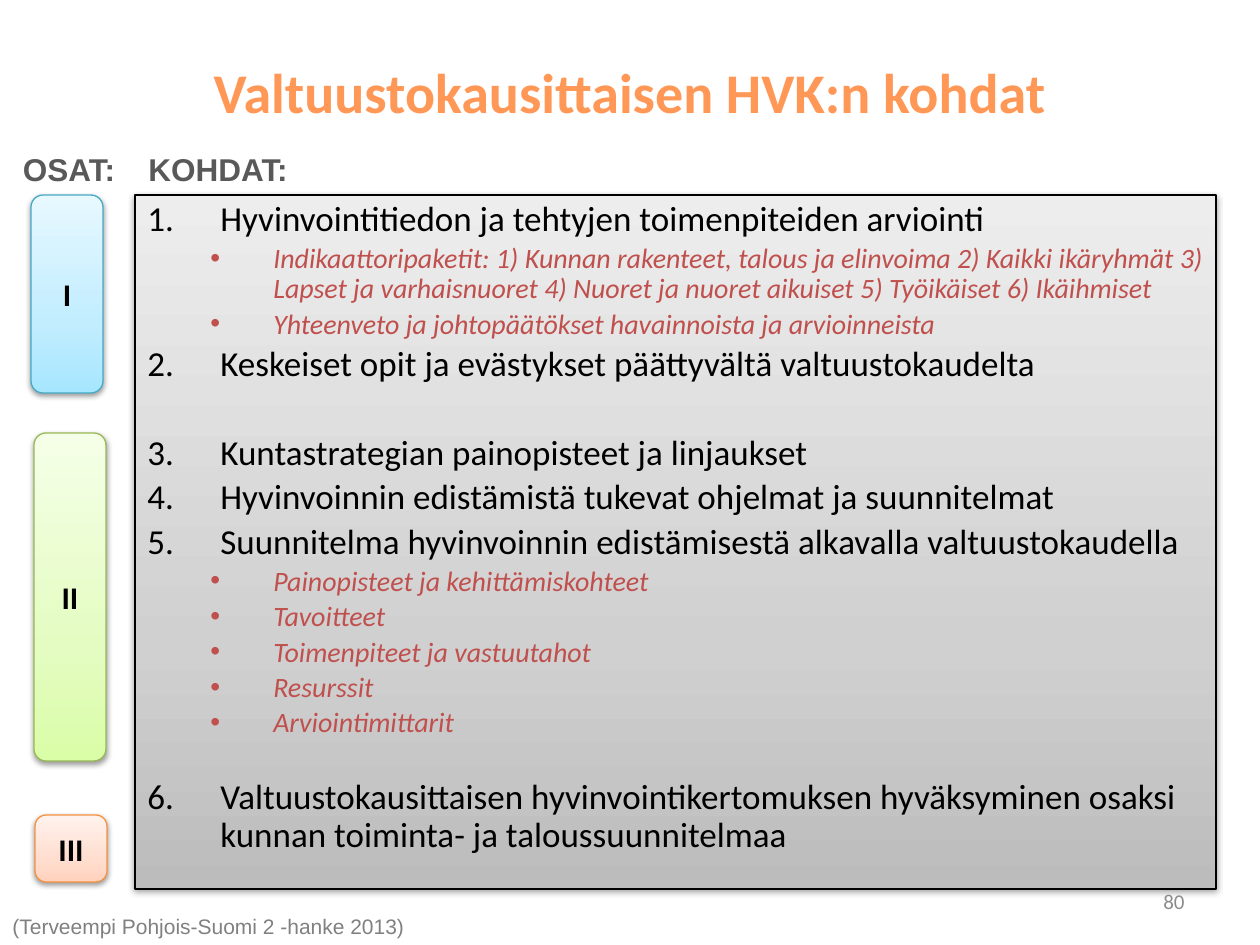
import pptx
import pptx.dml.color
import pptx.enum.shapes
import pptx.enum.text
import pptx.oxml
import pptx.oxml.ns
import pptx.util

EMU_PER_PX = 914400 / 126
COLOURS = {
    "black": "000000", "title": "FF9856", "detail": "C0504D", "heading": "595959",
    "source": "808080", "number": "8C8C8C",
    "blue": "46AAC5", "green": "98B955", "orange": "F69240",
}
GRADIENTS = {
    "black": ("BCBCBC", "D0D0D0", "EDEDED"),
    "blue": ("A7E6FF", "C1EDFF", "E7F8FF"),
    "green": ("DAFDA7", "E4FCC2", "F5FFE7"),
    "orange": ("FFD2BD", "FFDED0", "FFF2ED"),
}
ALIGN = pptx.enum.text.PP_ALIGN
ANCHOR = pptx.enum.text.MSO_ANCHOR
SHAPE = pptx.enum.shapes.MSO_SHAPE

# Each topic: text, details, points of space before it
TOPICS = [
    ("Hyvinvointitiedon ja tehtyjen toimenpiteiden arviointi", [
        "Indikaattoripaketit: 1) Kunnan rakenteet, talous ja elinvoima 2) Kaikki ikäryhmät 3) "
        "Lapset ja varhaisnuoret 4) Nuoret ja nuoret aikuiset 5) Työikäiset 6) Ikäihmiset",
        "Yhteenveto ja johtopäätökset havainnoista ja arvioinneista"], 0),
    ("Keskeiset opit ja evästykset päättyvältä valtuustokaudelta", [], 3.75),
    ("Kuntastrategian painopisteet ja linjaukset", [], 29),
    ("Hyvinvoinnin edistämistä tukevat ohjelmat ja suunnitelmat", [], 3.75),
    ("Suunnitelma hyvinvoinnin edistämisestä alkavalla valtuustokaudella", [
        "Painopisteet ja kehittämiskohteet", "Tavoitteet", "Toimenpiteet ja vastuutahot",
        "Resurssit", "Arviointimittarit"], 3.75),
    ("Valtuustokausittaisen hyvinvointikertomuksen hyväksyminen osaksi "
     "kunnan toiminta- ja taloussuunnitelmaa", [], 23),
]


def px(value):
    return pptx.util.Emu(round(value * EMU_PER_PX))


def rgb(name):
    return pptx.dml.color.RGBColor.from_string(COLOURS[name])


def add_xml(parent, xml):
    namespace = pptx.oxml.ns.nsdecls("a")
    parent.append(pptx.oxml.parse_xml(xml.replace(">", f" {namespace}>", 1)))


def write(para, text, size=18, colour="black", font="Calibri", bold=False, italic=False,
          align=ALIGN.LEFT):
    para.alignment = align
    span = para.add_run()
    span.text = text
    span.font.name = font
    span.font.size = pptx.util.Pt(size)
    span.font.bold = bold
    span.font.italic = italic
    span.font.color.rgb = rgb(colour)


def add_label(page, place, text, anchor=ANCHOR.TOP, **style):
    box = page.shapes.add_textbox(*map(px, place))
    box.text_frame.word_wrap = True
    box.text_frame.vertical_anchor = anchor
    write(box.text_frame.paragraphs[0], text, **style)


def add_panel(page, kind, place, colour):
    """Add a shape with a vertical gradient, a thin outline and a soft shadow."""
    panel = page.shapes.add_shape(kind, *map(px, place))
    properties = panel.element.spPr
    stops = "".join(
        f'<a:gs pos="{position}"><a:srgbClr val="{shade}"/></a:gs>'
        for position, shade in zip((0, 35000, 100000), GRADIENTS[colour]))
    add_xml(properties, f'<a:gradFill rotWithShape="1"><a:gsLst>{stops}</a:gsLst>'
                        '<a:lin ang="16200000" scaled="1"/></a:gradFill>')
    panel.line.color.rgb = rgb(colour)
    panel.line.width = pptx.util.Pt(0.75)
    add_xml(properties, '<a:effectLst><a:outerShdw blurRad="40000" dist="20000" dir="5400000" '
                        'rotWithShape="0"><a:srgbClr val="000000"><a:alpha val="38000"/>'
                        '</a:srgbClr></a:outerShdw></a:effectLst>')
    panel.text_frame.word_wrap = True
    return panel


def add_part(page, place, numeral, colour):
    part = add_panel(page, SHAPE.ROUNDED_RECTANGLE, place, colour)
    part.text_frame.vertical_anchor = ANCHOR.MIDDLE
    write(part.text_frame.paragraphs[0], numeral, bold=True, align=ALIGN.CENTER)


def format_item(para, margin, hanging, marker, before):
    properties = para._p.get_or_add_pPr()
    properties.set("marL", str(px(margin)))
    properties.set("indent", str(-px(hanging)))
    para.line_spacing = 0.9
    para.space_before = pptx.util.Pt(before)
    add_xml(properties, '<a:buFont typeface="Arial"></a:buFont>' if "buChar" in marker
            else '<a:buFont typeface="+mj-lt"></a:buFont>')
    add_xml(properties, marker)


def add_topics(page, place):
    panel = add_panel(page, SHAPE.RECTANGLE, place, "black")
    frame = panel.text_frame
    frame.vertical_anchor = ANCHOR.TOP
    for number, (topic, details, before) in enumerate(TOPICS, 1):
        para = frame.paragraphs[0] if number == 1 else frame.add_paragraph()
        marker = f'<a:buAutoNum type="arabicPeriod" startAt="{number}"></a:buAutoNum>'
        format_item(para, 73, 73, marker, before)
        write(para, topic, size=20)
        for detail in details:
            para = frame.add_paragraph()
            para.level = 1
            format_item(para, 126, 63, '<a:buChar char="•"></a:buChar>', 3)
            write(para, detail, size=16, colour="detail", italic=True)


def main():
    deck = pptx.Presentation()
    deck.slide_width, deck.slide_height = px(1260), px(945)
    page = deck.slides.add_slide(deck.slide_layouts[6])

    add_topics(page, (135, 195, 1081, 694))
    add_label(page, (903, 876, 294, 50), "80", anchor=ANCHOR.MIDDLE, size=12,
              colour="number", align=ALIGN.RIGHT)
    add_label(page, (63, 38, 1134, 107), "Valtuustokausittaisen HVK:n kohdat",
              anchor=ANCHOR.MIDDLE, size=32, colour="title", bold=True, align=ALIGN.CENTER)
    add_label(page, (0, 907, 689, 38), "(Terveempi Pohjois-Suomi 2 -hanke 2013)",
              size=12, colour="source", font="Arial")
    add_part(page, (31, 195, 72, 198), "I", "blue")
    add_part(page, (34, 433, 72, 328), "II", "green")
    add_part(page, (35, 815, 72, 67), "III", "orange")
    heading = {"colour": "heading", "font": "Arial", "bold": True}
    add_label(page, (3, 144, 132, 50), "OSAT:", align=ALIGN.CENTER, **heading)
    add_label(page, (136, 144, 198, 50), "KOHDAT:", **heading)

    deck.save("out.pptx")


if __name__ == "__main__":
    main()
